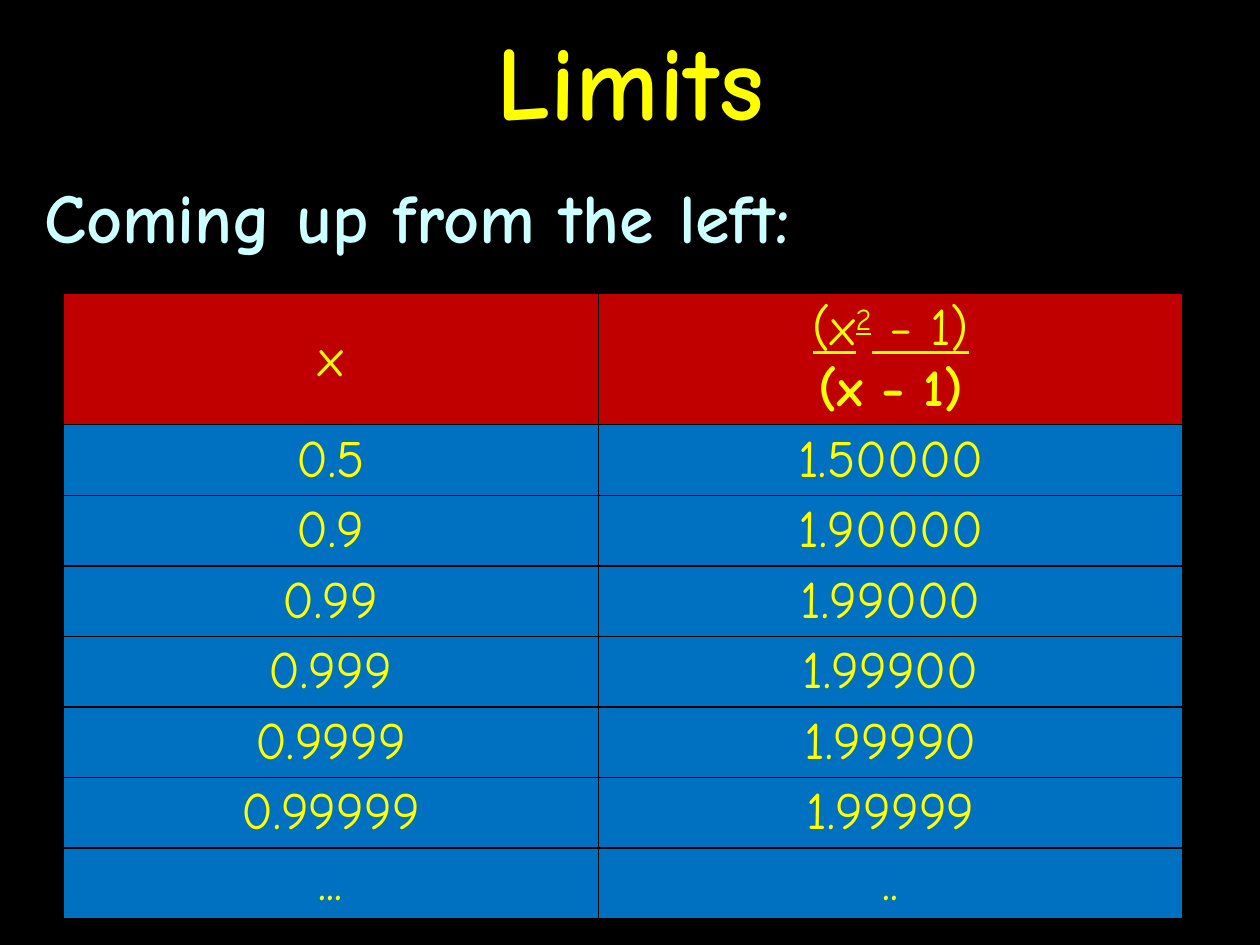
from lxml.etree import SubElement
from pptx import Presentation
from pptx.dml.color import RGBColor
from pptx.enum.text import MSO_ANCHOR, MSO_AUTO_SIZE, PP_ALIGN
from pptx.oxml.ns import qn
from pptx.util import Inches, Pt

FONT = "Comic Neue"
COLORS = {
    "background": "000000",
    "yellow": "FFFF00",
    "pale_cyan": "CCFFFF",
    "header": "C00000",
    "row": "0070C0",
    "border": "000000",
}
APPROACH = [
    ("0.5", "1.50000"),
    ("0.9", "1.90000"),
    ("0.99", "1.99000"),
    ("0.999", "1.99900"),
    ("0.9999", "1.99990"),
    ("0.99999", "1.99999"),
    ("...", ".."),
]
COLUMN_WIDTHS = (4.25, 4.64)
HEADER_HEIGHT, ROW_HEIGHT = 1.04, 0.56


def rgb(name):
    return RGBColor.from_string(COLORS[name])


def add_run(paragraph, text, size, color, bold=False, underline=False, baseline=0):
    """Add a run; baseline is its rise in percent."""
    run = paragraph.add_run()
    run.text = text
    font = run.font
    font.name, font.size = FONT, Pt(size)
    font.bold, font.underline = bold, underline
    font.color.rgb = rgb(color)
    if baseline:
        run._r.get_or_add_rPr().set("baseline", str(baseline * 1000))


def fill_placeholder(placeholder, box, text, size, color):
    placeholder.left, placeholder.top, placeholder.width, placeholder.height = map(Inches, box)
    frame = placeholder.text_frame
    frame.auto_size = MSO_AUTO_SIZE.NONE
    paragraph = frame.paragraphs[0]
    add_run(paragraph, text, size, color, bold=True)
    return paragraph


def remove_bullet(paragraph):
    properties = paragraph._p.get_or_add_pPr()
    properties.set("marL", "0")
    properties.set("indent", "0")
    SubElement(properties, qn("a:buNone"))


def add_borders(cell):
    """Put a thin line on all four sides, ahead of the cell's fill."""
    properties = cell._tc.get_or_add_tcPr()
    for position, side in enumerate(("lnL", "lnR", "lnT", "lnB")):
        line = SubElement(properties, qn(f"a:{side}"), w=str(Pt(1)))
        fill = SubElement(line, qn("a:solidFill"))
        SubElement(fill, qn("a:srgbClr"), val=COLORS["border"])
        properties.insert(position, line)


def fill_cell(cell, lines, color):
    """Each line is a list of (text, formatting) runs."""
    cell.fill.solid()
    cell.fill.fore_color.rgb = rgb(color)
    add_borders(cell)
    cell.vertical_anchor = MSO_ANCHOR.MIDDLE
    cell.margin_left = cell.margin_right = Inches(0.04)
    cell.margin_top = cell.margin_bottom = Inches(0.04)
    frame = cell.text_frame
    for index, runs in enumerate(lines):
        paragraph = frame.add_paragraph() if index else frame.paragraphs[0]
        paragraph.alignment = PP_ALIGN.CENTER
        for text, formatting in runs:
            add_run(paragraph, text, 30, "yellow", **formatting)


def add_limit_table(slide):
    height = HEADER_HEIGHT + ROW_HEIGHT * len(APPROACH)
    table = slide.shapes.add_table(
        len(APPROACH) + 1, len(COLUMN_WIDTHS),
        Inches(0.5), Inches(2.33), Inches(sum(COLUMN_WIDTHS)), Inches(height),
    ).table
    for column, width in zip(table.columns, COLUMN_WIDTHS):
        column.width = Inches(width)
    for index, row in enumerate(table.rows):
        row.height = Inches(ROW_HEIGHT if index else HEADER_HEIGHT)

    numerator = [
        ("(x", {"underline": True}),
        ("2", {"underline": True, "baseline": 30}),
        (" − 1)", {"underline": True}),
    ]
    denominator = [("(x − 1)", {"bold": True})]
    fill_cell(table.cell(0, 0), [[("x", {})]], "header")
    fill_cell(table.cell(0, 1), [numerator, denominator], "header")
    for row, values in enumerate(APPROACH, start=1):
        for column, value in enumerate(values):
            fill_cell(table.cell(row, column), [[(value, {})]], "row")


def main():
    presentation = Presentation()
    presentation.slide_width, presentation.slide_height = Inches(10), Inches(7.5)
    slide = presentation.slides.add_slide(presentation.slide_layouts[1])
    slide.background.fill.solid()
    slide.background.fill.fore_color.rgb = rgb("background")

    title, body = slide.placeholders
    heading = fill_placeholder(title, (0, 0, 10, 1.25), "Limits", 60, "yellow")
    heading.alignment = PP_ALIGN.CENTER
    title.text_frame.vertical_anchor = MSO_ANCHOR.MIDDLE
    lead = fill_placeholder(
        body, (0.25, 1.33, 9.5, 6.17), "Coming up from the left:", 40, "pale_cyan")
    remove_bullet(lead)
    add_limit_table(slide)
    presentation.save("out.pptx")


if __name__ == "__main__":
    main()
